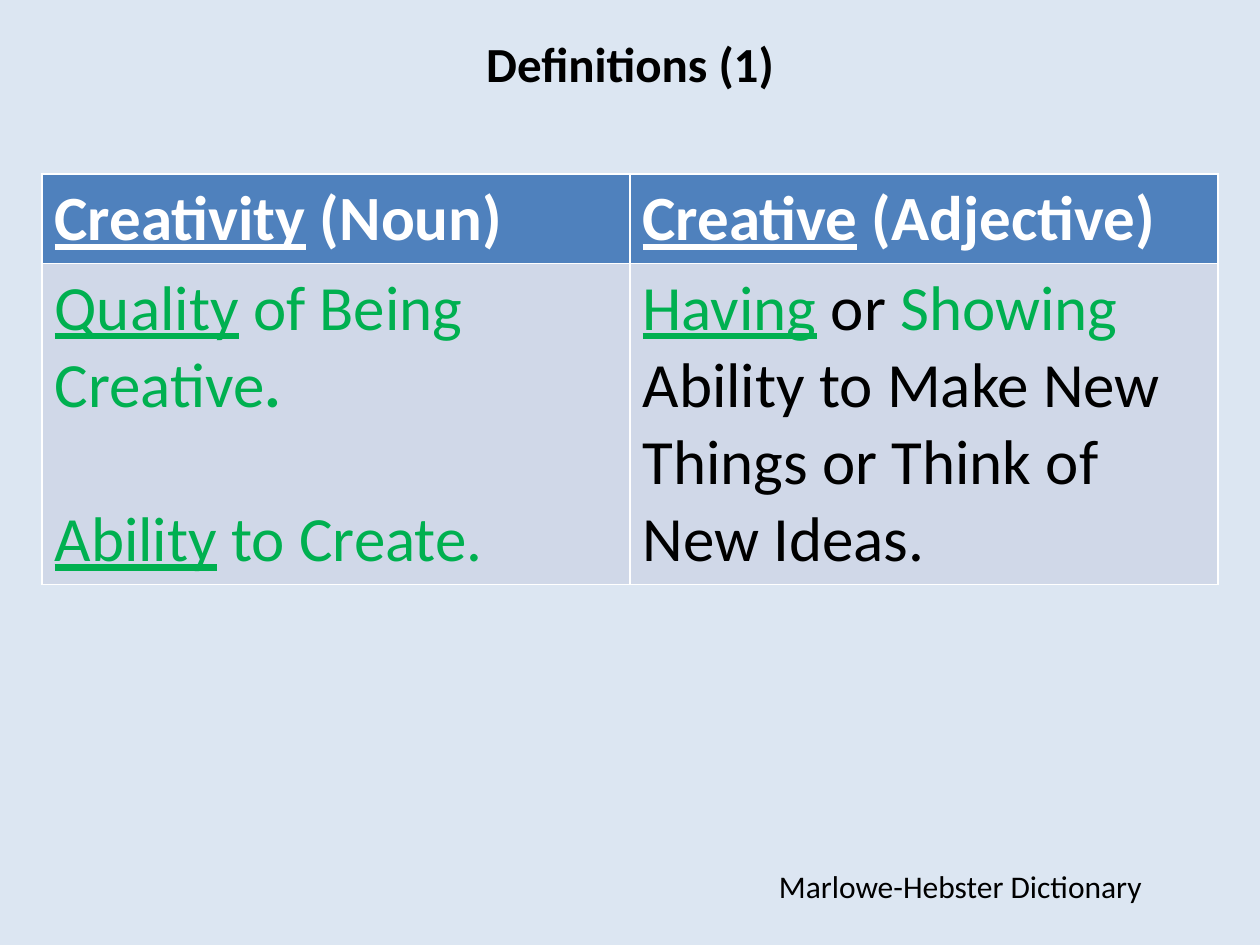
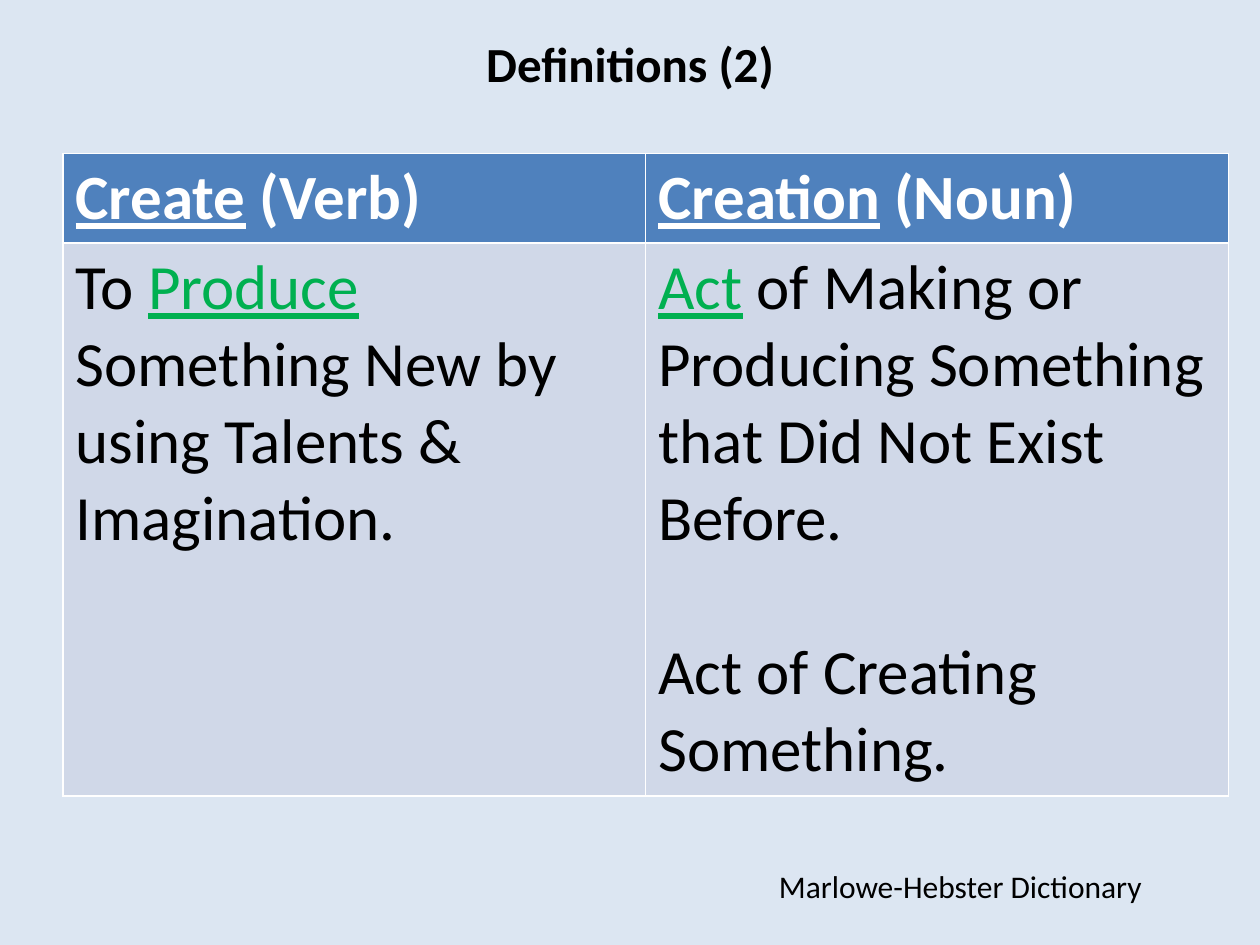
from pptx import Presentation
from pptx.dml.color import RGBColor
from pptx.enum import text
from pptx.util import Pt

FONT = "Calibri"
BACK, HEAD, BODY = "DCE6F2", "4F81BD", "D0D8E8"
BLACK, WHITE, GREEN = "000000", "FFFFFF", "00B050"
SOURCE = "Marlowe-Hebster Dictionary"


def paint(part, color):
    """Give a fill or a font a solid colour."""
    if hasattr(part, "solid"):
        part.solid()
        part.fore_color.rgb = RGBColor.from_string(color)
    else:
        part.color.rgb = RGBColor.from_string(color)


def write(par, runs, size, color, bold=False):
    """Add (text, marks) runs; marks: g green, u underlined, b bold."""
    par.font.name, par.font.size, par.font.bold = FONT, Pt(size), bold
    paint(par.font, color)
    for words, marks in runs:
        run = par.add_run()
        run.text = words
        # Table styles and mixed runs need the font on each run
        run.font.name, run.font.size = FONT, Pt(size)
        run.font.bold = bold or "b" in marks
        run.font.underline = "u" in marks
        paint(run.font, GREEN if "g" in marks else color)


# Each slide: table left, top, width, body height, then (word, class, paragraphs)
slides = [
    (24, 99.4, 672, 183, [
        ("Creativity", "Noun", [
            [("Quality", "gu"), (" of Being Creative", "g"), (".", "gb")],
            [("Ability", "gu"), (" to Create.", "g")]]),
        ("Creative", "Adjective", [
            [("Having", "gu"), (" or ", ""), ("Showing", "g"),
             (" Ability to Make New Things or Think of New Ideas.", "")]]),
    ]),
    (36, 87.6, 666, 316, [
        ("Create", "Verb", [
            [("To ", ""), ("Produce", "gu"),
             (" Something New by using Talents & Imagination.", "")]]),
        ("Creation", "Noun", [
            [("Act", "gu"),
             (" of Making or Producing Something that Did Not Exist Before.", "")],
            [("Act of Creating Something.", "")]]),
    ]),
]

deck = Presentation()
deck.slide_width, deck.slide_height = Pt(720), Pt(540)

for number, (left, top, width, height, terms) in enumerate(slides, 1):
    slide = deck.slides.add_slide(deck.slide_layouts[5])
    paint(slide.background.fill, BACK)

    title = slide.shapes.title
    title.left, title.top, title.width, title.height = Pt(36), Pt(6), Pt(648), Pt(60)
    title.text_frame.vertical_anchor = text.MSO_ANCHOR.MIDDLE
    par = title.text_frame.paragraphs[0]
    par.alignment = text.PP_ALIGN.CENTER
    write(par, [(f"Definitions ({number})", "")], 28, BLACK, True)

    table = slide.shapes.add_table(2, len(terms), Pt(left), Pt(top),
                                   Pt(width), Pt(51 + height)).table
    table.rows[0].height, table.rows[1].height = Pt(51), Pt(height)
    for col, (word, kind, meanings) in enumerate(terms):
        head, body = table.cell(0, col), table.cell(1, col)
        paint(head.fill, HEAD)
        paint(body.fill, BODY)
        write(head.text_frame.paragraphs[0],
              [(word, "u"), (f" ({kind})", "")], 36, WHITE, True)
        for row, runs in enumerate(meanings):
            frame = body.text_frame
            par = frame.add_paragraph() if row else frame.paragraphs[0]
            par.space_before = Pt(44 if row else 0)
            write(par, runs, 36, BLACK)

    note = slide.shapes.add_textbox(Pt(438), Pt(492), Pt(227), Pt(29)).text_frame
    note.word_wrap = False
    note.auto_size = text.MSO_AUTO_SIZE.SHAPE_TO_FIT_TEXT
    write(note.paragraphs[0], [(SOURCE, "")], 18, BLACK)

deck.save("out.pptx")
